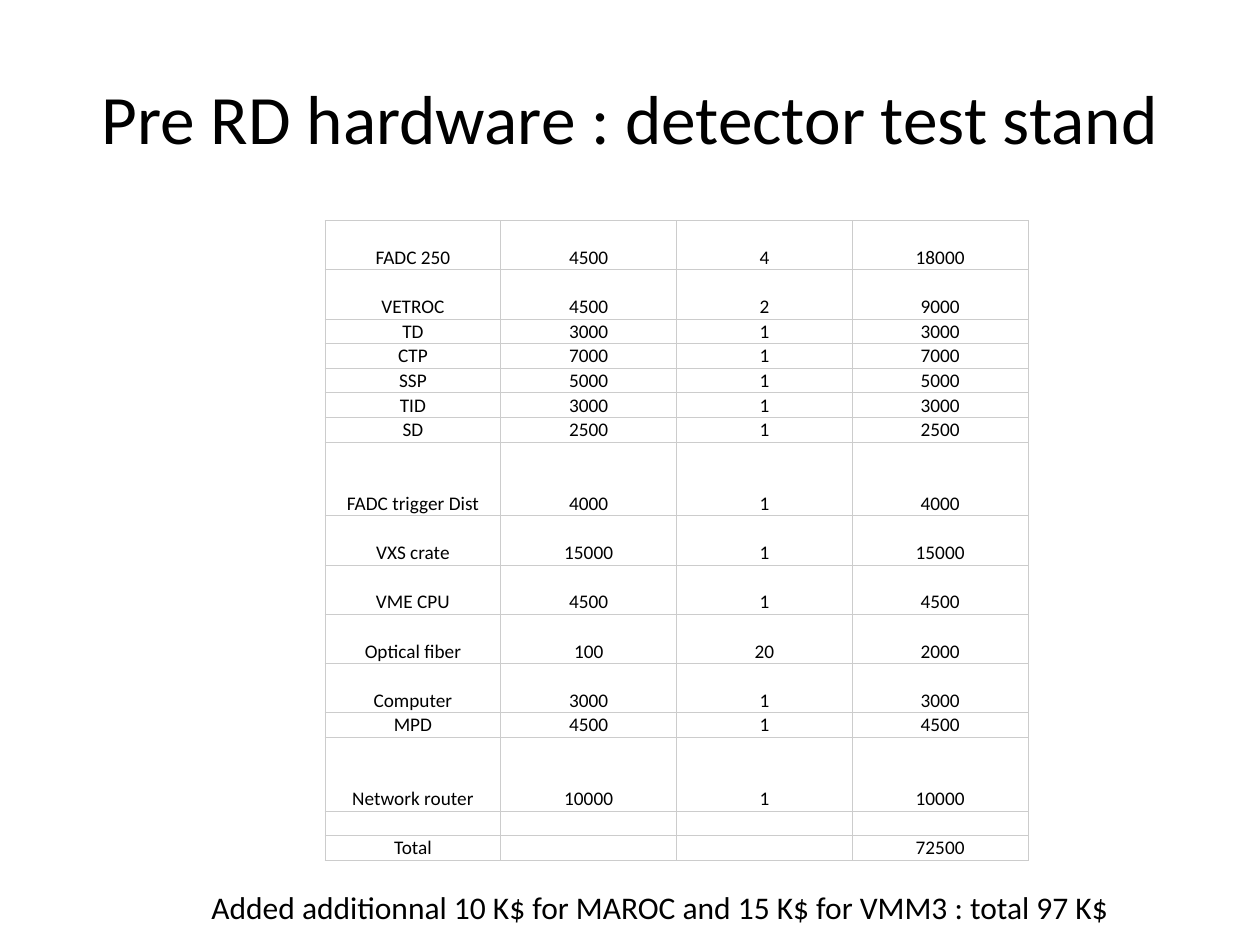
import pptx
import pptx.dml.color
import pptx.enum.text
import pptx.oxml.ns
import pptx.util
from lxml import etree

Inches, Pt = pptx.util.Inches, pptx.util.Pt
PP_ALIGN, MSO_ANCHOR = pptx.enum.text.PP_ALIGN, pptx.enum.text.MSO_ANCHOR
qn = pptx.oxml.ns.qn

BLACK = pptx.dml.color.RGBColor(0x00, 0x00, 0x00)
GRID_GRAY = pptx.dml.color.RGBColor(0xCC, 0xCC, 0xCC)
FONT = "Calibri"
CELL_SIZE = 11

# Height in text lines, then item, unit price, quantity and cost
BUDGET = [
    (2, "FADC 250", 4500, 4, 18000),
    (2, "VETROC", 4500, 2, 9000),
    (1, "TD", 3000, 1, 3000),
    (1, "CTP", 7000, 1, 7000),
    (1, "SSP", 5000, 1, 5000),
    (1, "TID", 3000, 1, 3000),
    (1, "SD", 2500, 1, 2500),
    (3, "FADC trigger Dist", 4000, 1, 4000),
    (2, "VXS crate", 15000, 1, 15000),
    (2, "VME CPU", 4500, 1, 4500),
    (2, "Optical fiber", 100, 20, 2000),
    (2, "Computer", 3000, 1, 3000),
    (1, "MPD", 4500, 1, 4500),
    (3, "Network router", 10000, 1, 10000),
    (1, "", "", "", ""),
    (1, "Total", "", "", 72500),
]


def style_paragraph(p, text, size, align):
    p.text = text
    p.alignment = align
    p.font.name = FONT
    p.font.size = Pt(size)
    p.font.color.rgb = BLACK


def add_text(slide, box, text, size, align, anchor, wrap):
    tf = slide.shapes.add_textbox(*box).text_frame
    tf.word_wrap = wrap
    tf.vertical_anchor = anchor
    style_paragraph(tf.paragraphs[0], text, size, align)
    return tf


def add_title(slide, box):
    add_text(slide, box, "Pre RD hardware : detector test stand", 39.6,
             PP_ALIGN.CENTER, MSO_ANCHOR.MIDDLE, True)


def add_footnote(slide, box):
    tf = add_text(slide, box,
                  "Added additionnal 10 K$ for MAROC and 15 K$ for VMM3 : total 97 K$",
                  18, PP_ALIGN.LEFT, MSO_ANCHOR.TOP, False)
    tf.auto_size = pptx.enum.text.MSO_AUTO_SIZE.SHAPE_TO_FIT_TEXT


def set_borders(cell):
    tc_pr = cell._tc.get_or_add_tcPr()
    for side in ("a:lnL", "a:lnR", "a:lnT", "a:lnB"):
        ln = etree.SubElement(tc_pr, qn(side), w=str(Pt(0.5)))
        fill = etree.SubElement(ln, qn("a:solidFill"))
        etree.SubElement(fill, qn("a:srgbClr"), val=str(GRID_GRAY))


def fill_cell(cell, text):
    cell.margin_left = cell.margin_right = Inches(0.01)
    cell.margin_top = cell.margin_bottom = 0
    cell.vertical_anchor = MSO_ANCHOR.BOTTOM
    set_borders(cell)
    cell.fill.background()
    p = cell.text_frame.paragraphs[0]
    style_paragraph(p, text, CELL_SIZE, PP_ALIGN.CENTER)
    if not text:  # keeps an empty row as low as a filled one
        etree.SubElement(p._p, qn("a:endParaRPr"), sz=str(CELL_SIZE * 100))


def add_budget_table(slide, box):
    height = box[3]
    columns = len(BUDGET[0]) - 1
    line_height = height / sum(lines for lines, *_ in BUDGET)
    table = slide.shapes.add_table(len(BUDGET), columns, *box).table
    table.first_row = table.horz_banding = False
    for row, (lines, *values) in zip(table.rows, BUDGET):
        row.height = int(lines * line_height)
        for cell, value in zip(row.cells, values):
            fill_cell(cell, str(value))


def main():
    prs = pptx.Presentation()
    prs.slide_width, prs.slide_height = Inches(10), Inches(7.5)
    slide = prs.slides.add_slide(prs.slide_layouts[6])
    add_title(slide, (Inches(0.5), Inches(0.3), Inches(9), Inches(1.25)))
    add_budget_table(slide, (Inches(2.58), Inches(1.75), Inches(5.58), Inches(5.08)))
    add_footnote(slide, (Inches(1.58), Inches(7), Inches(7.41), Inches(0.4)))
    prs.save("out.pptx")


if __name__ == "__main__":
    main()
